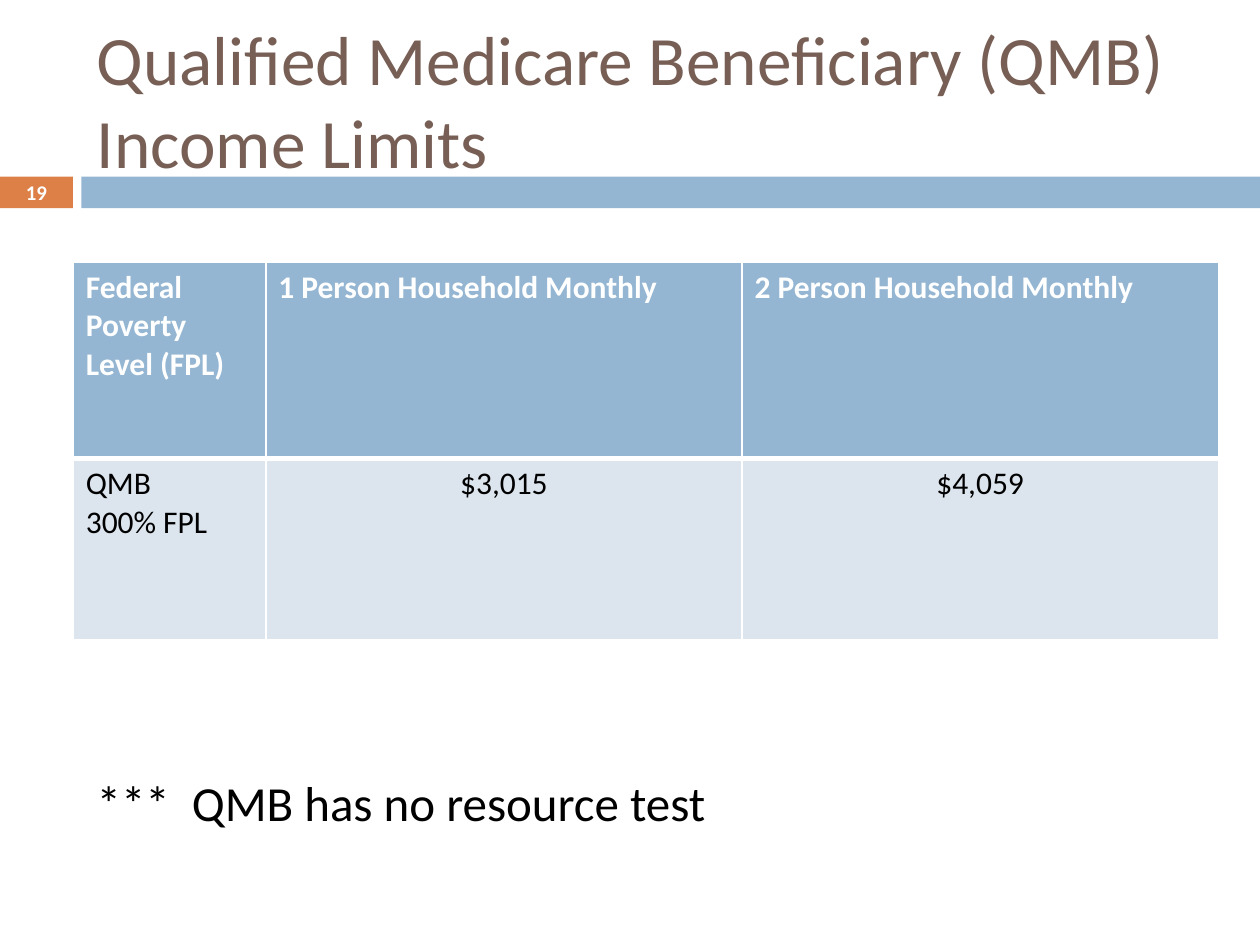
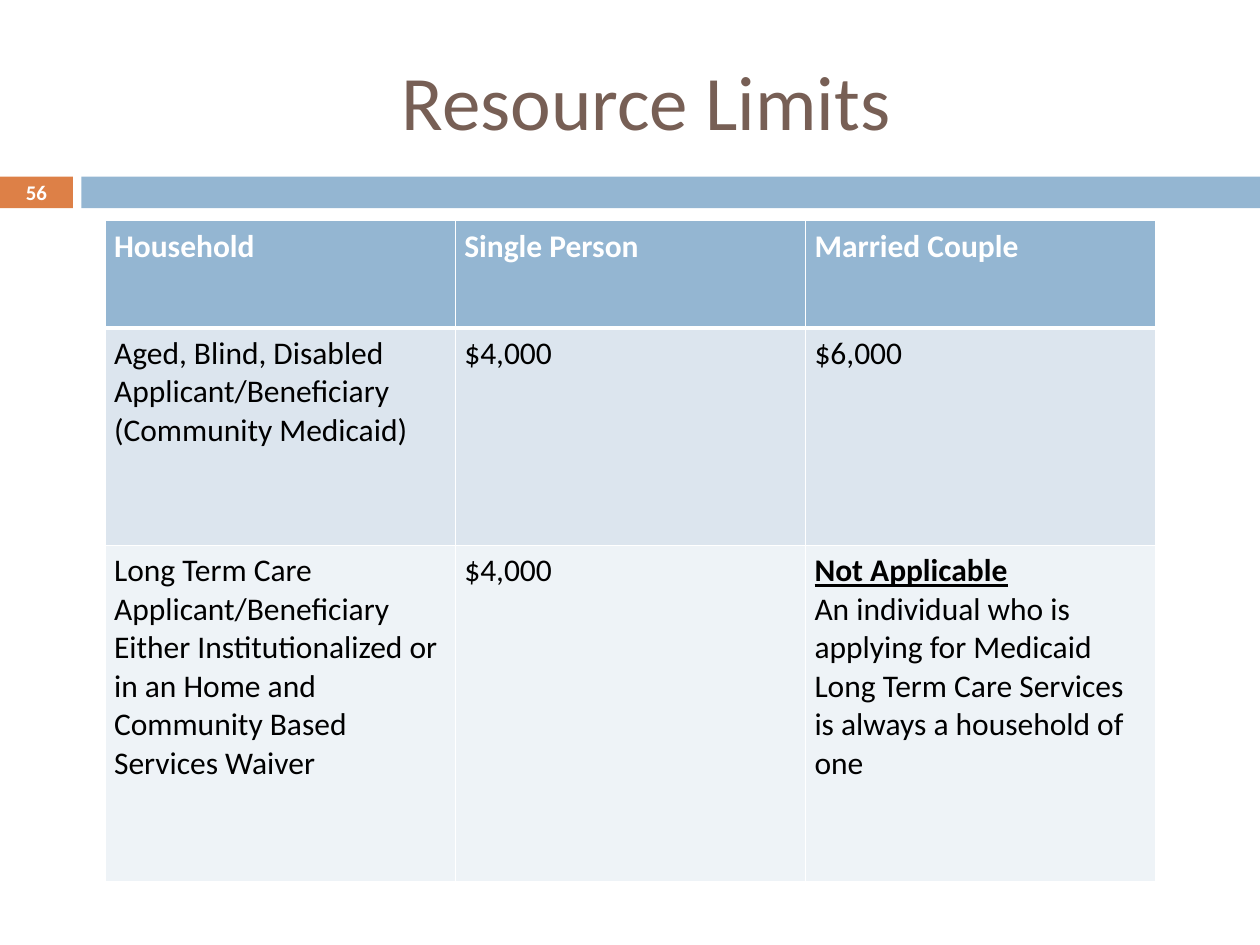
from lxml import etree
from pptx import Presentation
from pptx.dml.color import RGBColor
from pptx.enum.shapes import MSO_SHAPE
from pptx.enum.text import MSO_ANCHOR, PP_ALIGN
from pptx.oxml.ns import qn
from pptx.util import Cm, Pt

RECTANGLE = MSO_SHAPE.RECTANGLE
TOP, MIDDLE = MSO_ANCHOR.TOP, MSO_ANCHOR.MIDDLE
LEFT, CENTER = PP_ALIGN.LEFT, PP_ALIGN.CENTER

FONT = "Calibri"
BROWN, ORANGE, BLUE = "775F55", "DD8047", "94B6D2"
WHITE, BLACK = "FFFFFF", "000000"
ROW_FILLS = [BLUE, "DCE5EE", "EEF3F7"]

TITLE_BOX = (1.7, 0.64, 22.66, 2.74)
NUMBER_BAND = (0, 3.56, 1.47, 0.64)
WIDE_BAND = (1.64, 3.56, 23.76, 0.64)
NUMBER_BOX = (0, 3.53, 1.47, 0.69)
NOTE_BOX = (1.7, 15.44, 16.92, 1.45)


def color(value):
    return RGBColor.from_string(value)


def lengths(box):
    return [Cm(value) for value in box]


def write(frame, text, size=18, ink=BLACK, bold=False, underline=False, align=LEFT):
    para = frame.paragraphs[0]
    if para.runs:
        para = frame.add_paragraph()
    para.alignment = align
    span = para.add_run()
    span.text = text
    span.font.name = FONT
    span.font.size = Pt(size)
    span.font.bold = bold
    span.font.underline = underline
    span.font.color.rgb = color(ink)


def add_text(page, box, text, anchor=TOP, **style):
    frame = page.shapes.add_textbox(*lengths(box)).text_frame
    frame.word_wrap = True
    frame.vertical_anchor = anchor
    write(frame, text, **style)


def add_band(page, box, fill):
    band = page.shapes.add_shape(RECTANGLE, *lengths(box))
    band.shadow.inherit = False
    band.fill.solid()
    band.fill.fore_color.rgb = color(fill)
    band.line.fill.background()


def add_page(deck, title, number, size, align=LEFT):
    page = deck.slides.add_slide(deck.slide_layouts[6])
    add_band(page, NUMBER_BAND, ORANGE)
    add_band(page, WIDE_BAND, BLUE)
    add_text(page, TITLE_BOX, title, MIDDLE, size=size, ink=BROWN, align=align)
    add_text(page, NUMBER_BOX, number, MIDDLE, size=11.9, ink=WHITE, bold=True, align=CENTER)
    return page


def add_borders(cell, widths):
    properties = cell._tc.get_or_add_tcPr()
    for side, width in widths.items():
        line = etree.SubElement(properties, qn(f"a:ln{side}"), w=str(Pt(width)))
        fill = etree.SubElement(line, qn("a:solidFill"))
        etree.SubElement(fill, qn("a:srgbClr"), val=WHITE)


def fill_cell(cell, content, row, side_margin, align):
    add_borders(cell, {"L": 1, "R": 1, "T": 3 if row == 1 else 1, "B": 3 if row == 0 else 1})
    cell.fill.solid()
    cell.fill.fore_color.rgb = color(ROW_FILLS[row])
    cell.margin_left = cell.margin_right = Cm(side_margin)
    header = row == 0
    for text, style in content:
        write(cell.text_frame, text, **{"ink": WHITE if header else BLACK,
                                        "bold": header, "align": align, **style})


def add_limits_table(page, corner, widths, heights, rows, side_margin=0.25, value_align=LEFT):
    box = (*corner, sum(widths), sum(heights))
    table = page.shapes.add_table(len(rows), len(widths), *lengths(box)).table
    for column, width in zip(table.columns, widths):
        column.width = Cm(width)
    for line, height in zip(table.rows, heights):
        line.height = Cm(height)
    for row, contents in enumerate(rows):
        for column, content in enumerate(contents):
            if isinstance(content, str):
                content = [(text, {}) for text in content.split("\n")]
            align = value_align if row and column else LEFT
            fill_cell(table.cell(row, column), content, row, side_margin, align)


def add_income_page(deck):
    page = add_page(deck, "Qualified Medicare Beneficiary (QMB) Income Limits", "19", 39.6)
    rows = [
        ["Federal Poverty Level (FPL)", "1 Person Household Monthly", "2 Person Household Monthly"],
        ["QMB\n300% FPL", "$3,015", "$4,059"],
    ]
    add_limits_table(page, (1.48, 5.28), [3.88, 9.6, 9.6], [3.96, 3.66], rows, value_align=CENTER)
    add_text(page, NOTE_BOX, "***  QMB has no resource test", size=28)


def add_resource_page(deck):
    page = add_page(deck, "Resource Limits", "56", 44, CENTER)
    not_applicable = [
        ("Not Applicable", {"bold": True, "underline": True}),
        ("An individual who is applying for Medicaid Long Term Care Services "
         "is always a household of one", {}),
    ]
    rows = [
        ["Household", "Single Person", "Married Couple"],
        ["Aged, Blind, Disabled Applicant/Beneficiary (Community Medicaid)", "$4,000", "$6,000"],
        ["Long Term Care Applicant/Beneficiary Either Institutionalized or in an Home "
         "and Community Based Services Waiver", "$4,000", not_applicable],
    ]
    add_limits_table(page, (2.12, 4.45), [7.06] * 3, [2.16, 4.39, 6.78], rows, side_margin=0.18)


def main():
    deck = Presentation()
    deck.slide_width, deck.slide_height = Cm(25.4), Cm(19.05)
    add_income_page(deck)
    add_resource_page(deck)
    deck.save("out.pptx")


if __name__ == "__main__":
    main()
